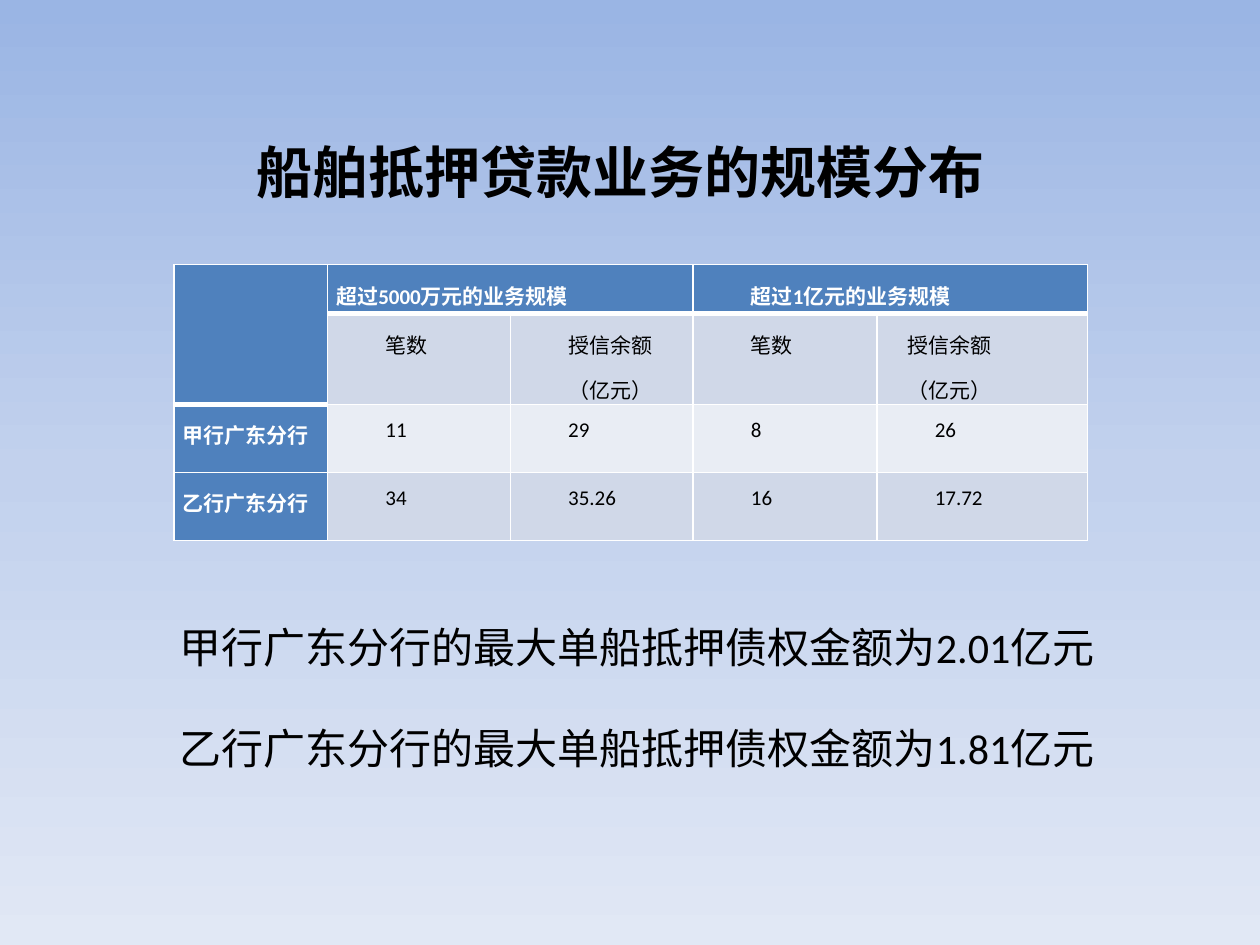
from copy import deepcopy

from lxml import etree
from pptx import Presentation
from pptx.dml.color import RGBColor
from pptx.enum.text import MSO_ANCHOR, MSO_AUTO_SIZE, PP_ALIGN
from pptx.oxml.ns import qn
from pptx.util import Inches, Pt

CENTER, JUSTIFY = PP_ALIGN.CENTER, PP_ALIGN.JUSTIFY
TOP, MIDDLE = MSO_ANCHOR.TOP, MSO_ANCHOR.MIDDLE
GROW = MSO_AUTO_SIZE.SHAPE_TO_FIT_TEXT

THEME = {
    "latin": "Calibri", "cjk": "Noto Sans CJK SC",
    "title": 32, "body": 24, "cell": 12,
    "ink": "000000", "white": "FFFFFF", "head": "4F81BD",
    "bands": ("D0D8E8", "E9EDF4"),
    "sky": ((0, "9AB5E4"), (0.5, "C2D1ED"), (1, "E1E8F5")),
}

TITLE = "船舶抵押贷款业务的规模分布"
NOTES = ["甲行广东分行的最大单船抵押债权金额为2.01亿元",
         "乙行广东分行的最大单船抵押债权金额为1.81亿元"]
ROWS = [
    ["", "超过5000万元的业务规模", "", "超过1亿元的业务规模", ""],
    ["", "笔数", "授信余额\n（亿元）", "笔数", "授信余额\n（亿元）"],
    ["甲行广东分行", "11", "29", "8", "26"],
    ["乙行广东分行", "34", "35.26", "16", "17.72"],
]
COL_WIDTHS = [1.22, 1.45, 1.45, 1.46, 1.67]
ROW_HEIGHTS = [0.39, 0.72, 0.54, 0.54]
MERGES = [((0, 0), (1, 0)), ((0, 1), (0, 2)), ((0, 3), (0, 4))]
INDENT = 0.39
SPECIAL_INDENTS = {(0, 1): 0, (1, 4): 0.17}


def rgb(name):
    return RGBColor.from_string(THEME.get(name, name))


def add_run(p, text, size, color="ink", bold=False, font="latin"):
    r = p.add_run()
    r.text = text
    formats = {"size": Pt(size), "bold": bold, "name": THEME[font]}
    for key, value in formats.items():
        setattr(r.font, key, value)
    r.font.color.rgb = rgb(color)
    etree.SubElement(r.font._element, qn("a:ea"), typeface=THEME["cjk"])


def add_text_box(s, box, **formats):
    tf = s.shapes.add_textbox(*map(Inches, box)).text_frame
    for key, value in {"word_wrap": True, **formats}.items():
        setattr(tf, key, value)
    return tf


def paint_background(s):
    fill = s.background.fill
    fill.gradient()
    fill.gradient_angle = 270
    first = fill.gradient_stops[0]._gs
    first.addnext(deepcopy(first))
    for stop, (position, color) in zip(fill.gradient_stops, THEME["sky"]):
        stop.position = position
        stop.color.rgb = rgb(color)


def rule_width(boundary, col):
    """Points of the rule above row `boundary`; thick below the header."""
    return 3 if boundary == (2 if col == 0 else 1) else 1


def add_borders(cell, row, col):
    widths = {"L": 1, "R": 1, "T": rule_width(row, col),
              "B": rule_width(row + 1, col)}
    tcPr = cell._tc.get_or_add_tcPr()
    for i, (side, width) in enumerate(widths.items()):
        ln = etree.Element(qn(f"a:ln{side}"), w=str(Pt(width)))
        solid = etree.SubElement(ln, qn("a:solidFill"))
        etree.SubElement(solid, qn("a:srgbClr"), val=THEME["white"])
        tcPr.insert(i, ln)


def fill_cell(cell, row, col, text):
    is_head = row == 0 or col == 0
    for side in ("left", "right"):
        setattr(cell, f"margin_{side}", Inches(0.07))
    cell.margin_top = cell.margin_bottom = 0
    cell.fill.solid()
    cell.fill.fore_color.rgb = rgb(
        "head" if is_head else THEME["bands"][(row + 1) % 2])
    add_borders(cell, row, col)
    if not text:
        return
    indent = SPECIAL_INDENTS.get((row, col), INDENT if col else 0)
    tf = cell.text_frame
    for i, line in enumerate(text.split("\n")):
        p = tf.add_paragraph() if i else tf.paragraphs[0]
        p.alignment, p.line_spacing = JUSTIFY, 1.5
        p._p.get_or_add_pPr().set("indent", str(Inches(indent)))
        add_run(p, line, THEME["cell"], "white" if is_head else "ink", is_head)


def add_scale_table(s):
    table = s.shapes.add_table(
        len(ROWS), len(COL_WIDTHS), Inches(1.38), Inches(2.1),
        Inches(sum(COL_WIDTHS)), Inches(sum(ROW_HEIGHTS))).table
    for column, width in zip(table.columns, COL_WIDTHS):
        column.width = Inches(width)
    for row, height in zip(table.rows, ROW_HEIGHTS):
        row.height = Inches(height)
    for start, end in MERGES:
        table.cell(*start).merge(table.cell(*end))
    for i, row in enumerate(ROWS):
        for j, text in enumerate(row):
            fill_cell(table.cell(i, j), i, j, text)


def main():
    prs = Presentation()
    prs.slide_width, prs.slide_height = Inches(10), Inches(7.5)
    s = prs.slides.add_slide(prs.slide_layouts[6])
    paint_background(s)

    # The deep bottom margin lifts the title above the middle of its box.
    tf = add_text_box(s, (0.43, 0.99, 9, 1.25), vertical_anchor=MIDDLE,
                      margin_bottom=Inches(0.57))
    tf.paragraphs[0].alignment = CENTER
    add_run(tf.paragraphs[0], TITLE, THEME["title"], bold=True, font="cjk")

    add_scale_table(s)

    tf = add_text_box(s, (1.33, 4.88, 7.48, 1.31), vertical_anchor=TOP,
                      auto_size=GROW)
    for i, note in enumerate(NOTES):
        p = tf.add_paragraph() if i else tf.paragraphs[0]
        p.space_before = Pt(29 if i else 0)
        add_run(p, note, THEME["body"])

    prs.save("out.pptx")


if __name__ == "__main__":
    main()
